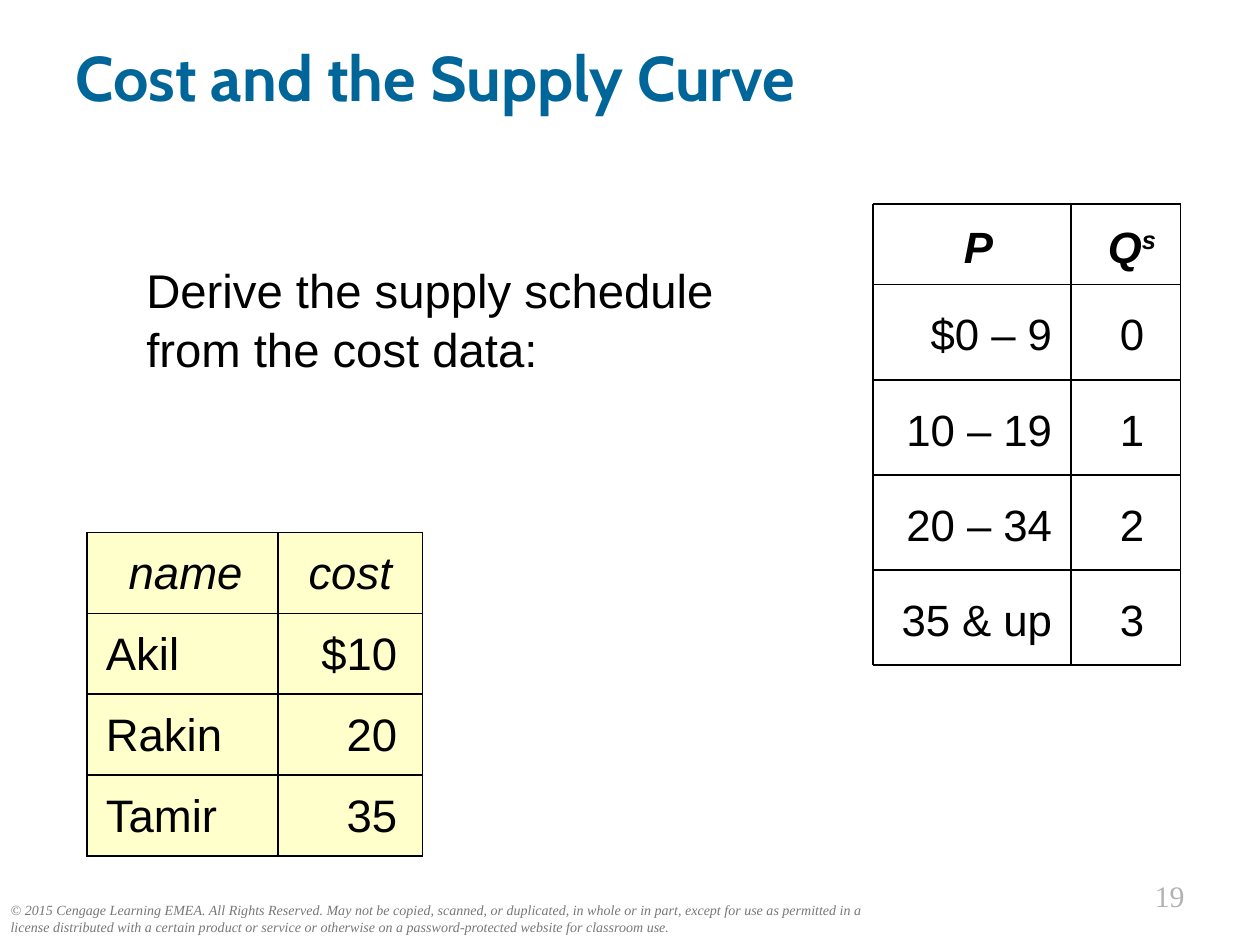
from itertools import accumulate

from lxml import etree
from pptx import Presentation
from pptx.dml.color import RGBColor
from pptx.enum.shapes import MSO_CONNECTOR as Connector
from pptx.enum.text import MSO_ANCHOR as Anchor, PP_ALIGN as Align
from pptx.oxml.ns import qn
from pptx.util import Pt

COLORS = {
    "title": "006699",
    "text": "000000",
    "copyright": "777777",
    "number": "B2B2B2",
    "cost_fill": "FFFFCC",
}


class SlideBuilder:
    font = "Arial"
    line_spacing = 1.05
    line_width = 1

    def __init__(self, slide):
        self.slide = slide

    def format_run(self, run, size, color="text", font=None, bold=False, italic=False):
        run.font.name = font or self.font
        run.font.size = Pt(size)
        run.font.bold = bold
        run.font.italic = italic
        run.font.color.rgb = RGBColor.from_string(COLORS[color])

    def text(self, text, box, size, align=Align.LEFT, anchor=Anchor.TOP,
             spacing=1.0, right_margin=7.2, **style):
        shape = self.slide.shapes.add_textbox(*map(Pt, box))
        frame = shape.text_frame
        frame.word_wrap = True
        frame.vertical_anchor = anchor
        frame.margin_right = Pt(right_margin)
        frame.text = text
        paragraph = frame.paragraphs[0]
        paragraph.alignment = align
        paragraph.line_spacing = spacing
        self.format_run(paragraph.runs[0], size, **style)
        return paragraph

    def superscript(self, paragraph, text, size, **style):
        run = paragraph.add_run()
        run.text = text
        self.format_run(run, size, **style)
        run._r.get_or_add_rPr().set("baseline", "30000")

    def line(self, *ends):
        connector = self.slide.shapes.add_connector(Connector.STRAIGHT, *map(Pt, ends))
        connector.line.color.rgb = RGBColor.from_string(COLORS["text"])
        connector.line.width = Pt(self.line_width)
        etree.SubElement(connector._element.spPr, qn("a:effectLst"))

    def ruled_grid(self, xs, ys):
        for y in ys:
            self.line(xs[0], y, xs[-1], y)
        for x in xs:
            self.line(x, ys[0], x, ys[-1])

    def borders(self, cell):
        properties = cell._tc.get_or_add_tcPr()
        for side in ("a:lnL", "a:lnR", "a:lnT", "a:lnB"):
            line = etree.SubElement(properties, qn(side), w=str(Pt(self.line_width)))
            fill = etree.SubElement(line, qn("a:solidFill"))
            etree.SubElement(fill, qn("a:srgbClr"), val=COLORS["text"])

    def table(self, rows, left, top, widths, row_height, size, aligns,
              header_margins, body_margins, fill):
        frame = self.slide.shapes.add_table(
            len(rows), len(widths), Pt(left), Pt(top),
            Pt(sum(widths)), Pt(row_height * len(rows)))
        table = frame.table
        table.first_row = table.horz_banding = False
        for column, width in zip(table.columns, widths):
            column.width = Pt(width)
        for index, (row, values) in enumerate(zip(table.rows, rows)):
            row.height = Pt(row_height)
            header = index == 0
            margins = header_margins if header else body_margins
            for cell, value, align, (left_margin, right_margin) in zip(
                    row.cells, values, aligns, margins):
                self.borders(cell)
                cell.fill.solid()
                cell.fill.fore_color.rgb = RGBColor.from_string(COLORS[fill])
                cell.vertical_anchor = Anchor.MIDDLE
                cell.margin_left, cell.margin_right = Pt(left_margin), Pt(right_margin)
                cell.text_frame.text = value
                paragraph = cell.text_frame.paragraphs[0]
                paragraph.alignment = Align.CENTER if header else align
                paragraph.line_spacing = self.line_spacing
                self.format_run(paragraph.runs[0], size, italic=header)


def main():
    presentation = Presentation()
    presentation.slide_width, presentation.slide_height = Pt(720), Pt(540)
    builder = SlideBuilder(presentation.slides.add_slide(presentation.slide_layouts[6]))

    # Footer
    builder.text(
        "© 2015 Cengage Learning EMEA. All Rights Reserved. May not be copied, scanned, "
        "or duplicated, in whole or in part, except for use as permitted in a license "
        "distributed with a certain product or service or otherwise on a "
        "password-protected website for classroom use.",
        (-1, 511.6, 523, 27), 8, color="copyright", font="Times New Roman", italic=True)
    builder.text("19", (594, 498, 90, 28), 17, align=Align.RIGHT,
                 color="number", font="Times New Roman")

    # Title
    builder.text("Cost and the Supply Curve", (36, 18, 648, 51), 36,
                 anchor=Anchor.MIDDLE, color="title", font="Cabin", bold=True)

    # Supply schedule: text in a ruled grid
    schedule = [("P", "Q"), ("$0 – 9", "0"), ("10 – 19", "1"), ("20 – 34", "2"),
                ("35 & up", "3")]
    widths, heights = (113, 62.6), [46] + [54.4] * 4
    xs = list(accumulate(widths, initial=499))
    ys = list(accumulate(heights, initial=116.6))
    for values, y, height in zip(schedule, ys, heights):
        header = y == ys[0]
        style = {"bold": header, "italic": header}
        for column, (value, x, width) in enumerate(zip(values, xs, widths)):
            price = column == 0 and not header
            paragraph = builder.text(
                value, (x, y, width, height), 25, anchor=Anchor.MIDDLE,
                align=Align.RIGHT if price else Align.CENTER,
                spacing=builder.line_spacing, right_margin=10.8 if price else 0, **style)
            if value == "Q":
                builder.superscript(paragraph, "s", 25, **style)
    builder.ruled_grid(xs, ys)

    # Task
    builder.text("Derive the supply schedule from the cost data:",
                 (76.5, 144, 345, 75.6), 27, spacing=builder.line_spacing)

    # Cost data
    builder.table(
        [("name", "cost"), ("Akil", "$10"), ("Rakin", "20"), ("Tamir", "35")],
        49.7, 304.3, (109.2, 82.6), 46.2, 26,
        aligns=(Align.LEFT, Align.RIGHT),
        header_margins=((10.8, 7.2), (7.2, 7.2)), body_margins=((10.8, 7.2), (7.2, 14.4)),
        fill="cost_fill")

    presentation.save("out.pptx")


if __name__ == "__main__":
    main()
